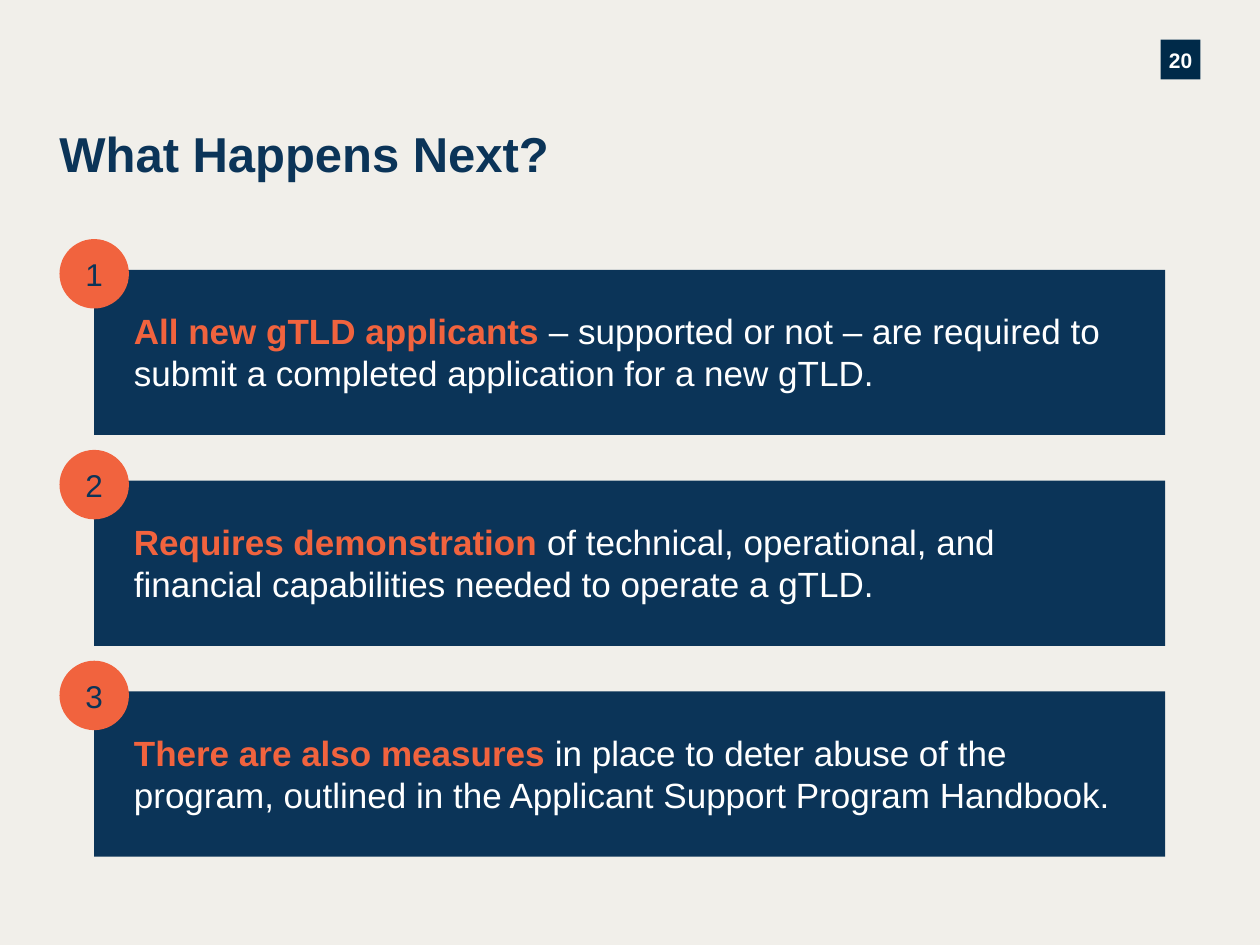
from pptx import Presentation
from pptx.dml.color import RGBColor
from pptx.enum.shapes import MSO_SHAPE
from pptx.enum.text import MSO_ANCHOR, PP_ALIGN
from pptx.util import Cm, Pt

COLORS = {
    "background": "F1EFEA",
    "navy": "0B3458",
    "badge": "002A49",
    "orange": "F1633E",
    "white": "FFFFFF",
}

STEPS = [
    ("All new gTLD applicants ",
     "– supported or not – are required to submit a completed application for a new gTLD."),
    ("Requires demonstration ",
     "of technical, operational, and financial capabilities needed to operate a gTLD."),
    ("There are also measures ",
     "in place to deter abuse of the program, outlined in the Applicant Support Program Handbook."),
]

# Step layout in centimetres
PANEL_LEFT, PANEL_TOP, PANEL_WIDTH, PANEL_HEIGHT = 1.9, 5.44, 21.59, 3.33
STEP_PITCH = 4.25
CIRCLE_SIZE = 1.4
CIRCLE_RISE = 0.62


def color(name):
    return RGBColor.from_string(COLORS[name])


def add_text(frame, text, *, size, fill, bold=False, align=PP_ALIGN.LEFT, line_spacing=None):
    """Append a run to the frame's first paragraph."""
    paragraph = frame.paragraphs[0]
    paragraph.alignment = align
    if line_spacing:
        paragraph.line_spacing = line_spacing
    run = paragraph.add_run()
    run.text = text
    run.font.name = "Arial"
    run.font.size = Pt(size)
    run.font.bold = bold
    run.font.color.rgb = color(fill)


def prepare_frame(frame, insets=(0, 0, 0, 0), anchor=MSO_ANCHOR.TOP):
    frame.word_wrap = True
    frame.vertical_anchor = anchor
    frame.margin_left, frame.margin_top, frame.margin_right, frame.margin_bottom = map(Cm, insets)
    return frame


def add_block(slide, preset, box, fill, **frame_format):
    """Add a filled, unoutlined shape and return its text frame."""
    block = slide.shapes.add_shape(preset, *map(Cm, box))
    block.shadow.inherit = False
    block.fill.solid()
    block.fill.fore_color.rgb = color(fill)
    block.line.fill.background()
    return prepare_frame(block.text_frame, **frame_format)


def add_step(slide, number, lead, detail):
    top = PANEL_TOP + (number - 1) * STEP_PITCH
    panel = add_block(slide, MSO_SHAPE.RECTANGLE,
                      (PANEL_LEFT, top, PANEL_WIDTH, PANEL_HEIGHT), "navy",
                      insets=(0.8, 0.8, 0.9, 0.8))
    add_text(panel, lead, size=20, fill="orange", bold=True)
    add_text(panel, detail, size=20, fill="white")

    # Numbered circle centred on the panel's left edge
    circle = add_block(slide, MSO_SHAPE.OVAL,
                       (PANEL_LEFT - CIRCLE_SIZE / 2, top - CIRCLE_RISE, CIRCLE_SIZE, CIRCLE_SIZE),
                       "orange", insets=(0.25, 0.13, 0.25, 0.13), anchor=MSO_ANCHOR.MIDDLE)
    add_text(circle, str(number), size=18, fill="navy", align=PP_ALIGN.CENTER)


def main():
    deck = Presentation()
    deck.slide_width, deck.slide_height = Cm(25.4), Cm(19.05)
    slide = deck.slides.add_slide(deck.slide_layouts[6])
    slide.background.fill.solid()
    slide.background.fill.fore_color.rgb = color("background")

    # Page number
    badge = add_block(slide, MSO_SHAPE.RECTANGLE, (23.4, 0.8, 0.8, 0.8), "badge",
                      anchor=MSO_ANCHOR.MIDDLE)
    add_text(badge, "20", size=12, fill="white", bold=True,
             align=PP_ALIGN.CENTER, line_spacing=1.08)

    # Title
    title = slide.shapes.add_textbox(Cm(1.2), Cm(2.5), Cm(14.94), Cm(1.47))
    add_text(prepare_frame(title.text_frame), "What Happens Next?",
             size=28, fill="navy", bold=True)

    # Numbered steps
    for number, (lead, detail) in enumerate(STEPS, start=1):
        add_step(slide, number, lead, detail)

    deck.save("out.pptx")


if __name__ == "__main__":
    main()
